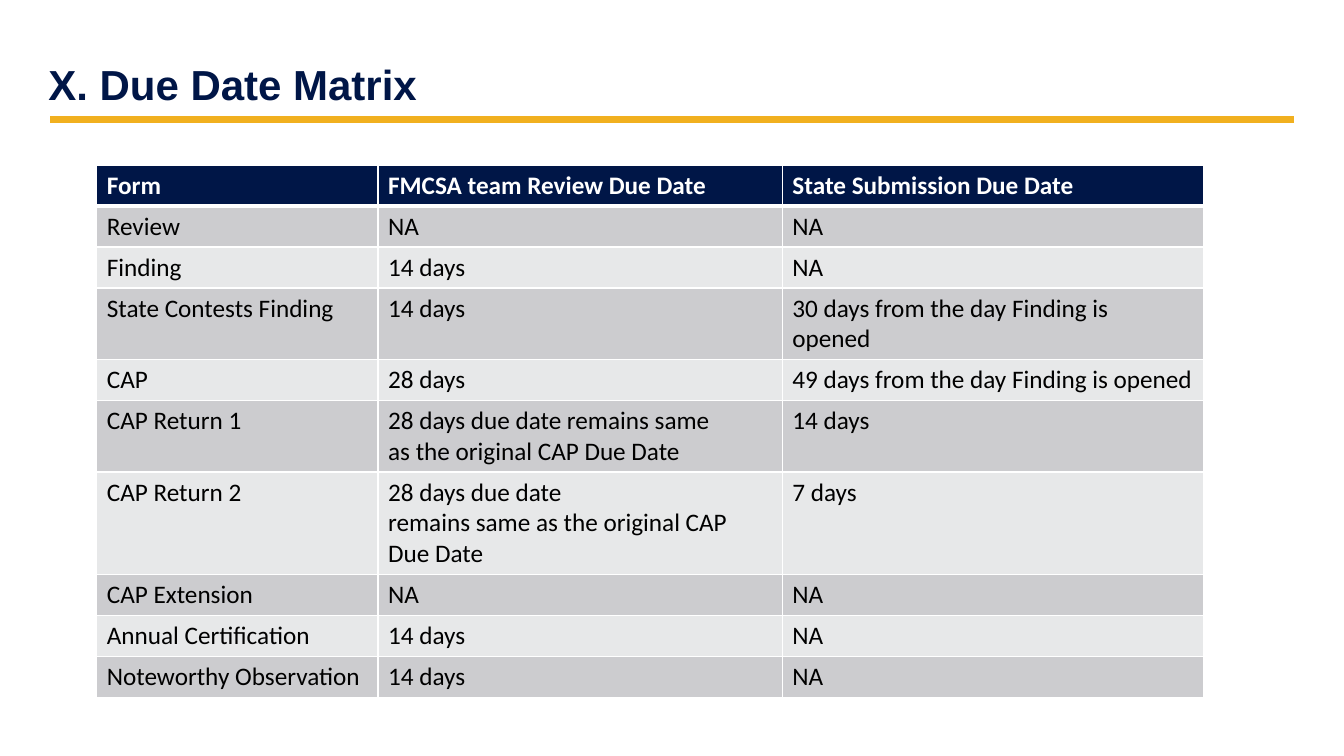
from lxml import etree
from pptx import Presentation
from pptx import util as u
from pptx.dml.color import RGBColor
from pptx.enum import shapes, text
from pptx.oxml import ns

COLORS = {
    "navy": "001647",
    "gold": "F1B01F",
    "white": "FFFFFF",
    "black": "000000",
    "dark_band": "CCCCCF",
    "light_band": "E7E8E9",
}
NBSP = chr(160)
COL_WIDTHS = [2.79, 4.01, 4.18]
ROW_HEIGHT = 0.4
ROWS = [
    ("Form", "FMCSA team Review Due Date", "State Submission Due Date"),
    ("Review", "NA", "NA"),
    ("Finding", "14 days", "NA"),
    ("State Contests Finding", "14 days", "30 days from the day Finding is opened~"),
    ("CAP", "28 days", "49 days from the day Finding is opened"),
    ("CAP Return 1", "28 days due date remains same as~the original CAP Due Date", "14 days"),
    ("CAP Return 2", "28 days due~date remains~same~as~the original CAP Due Date", "7 days"),
    ("CAP Extension", "NA", "NA"),
    ("Annual Certification", "14 days", "NA"),
    ("Noteworthy Observation", "14 days", "NA"),
]


def rgb(name):
    return RGBColor.from_string(COLORS[name])


def write_text(tf, content, *, size, font, color, bold=False, spacing=None):
    p = tf.paragraphs[0]
    p.alignment = text.PP_ALIGN.LEFT
    if spacing:
        p.line_spacing = spacing
    r = p.add_run()
    r.text = content.replace("~", NBSP)
    r.font.size = u.Pt(size)
    r.font.name = font
    r.font.bold = bold
    r.font.color.rgb = rgb(color)


def add_title(s, x, y, w, h):
    sp = s.shapes.title
    sp.left, sp.top, sp.width, sp.height = map(u.Inches, (x, y, w, h))
    tf = sp.text_frame
    tf.word_wrap = True
    tf.vertical_anchor = text.MSO_ANCHOR.BOTTOM
    tf.margin_left = 0
    write_text(tf, "X. Due Date Matrix", size=30, font="Arial",
               color="navy", bold=True, spacing=0.9)


def add_rule(s, x, y, w):
    line = s.shapes.add_connector(
        shapes.MSO_CONNECTOR.STRAIGHT,
        u.Inches(x), u.Inches(y), u.Inches(x + w), u.Inches(y))
    line.line.color.rgb = rgb("gold")
    line.line.width = u.Pt(5)
    etree.SubElement(line._element.spPr, ns.qn("a:effectLst"))


def set_border(cell, side, points):
    tcPr = cell._tc.get_or_add_tcPr()
    ln = etree.SubElement(tcPr, ns.qn(f"a:ln{side}"), w=str(u.Pt(points)))
    fill = etree.SubElement(ln, ns.qn("a:solidFill"))
    etree.SubElement(fill, ns.qn("a:srgbClr"), val=COLORS["white"])


def format_cell(cell, content, row):
    header = row == 0
    for side in "LRTB":
        thick = (header and side == "B") or (row == 1 and side == "T")
        set_border(cell, side, 3 if thick else 1)
    band = "dark_band" if row % 2 else "light_band"
    cell.fill.solid()
    cell.fill.fore_color.rgb = rgb("navy" if header else band)
    write_text(cell.text_frame, content, size=18, font="Calibri",
               color="white" if header else "black", bold=header)


def add_matrix(s, x, y):
    table = s.shapes.add_table(
        len(ROWS), len(COL_WIDTHS), u.Inches(x), u.Inches(y),
        u.Inches(sum(COL_WIDTHS)), u.Inches(ROW_HEIGHT * len(ROWS))).table
    for col, width in zip(table.columns, COL_WIDTHS):
        col.width = u.Inches(width)
    for i, values in enumerate(ROWS):
        table.rows[i].height = u.Inches(ROW_HEIGHT)
        for j, value in enumerate(values):
            format_cell(table.cell(i, j), value, i)


def main():
    prs = Presentation()
    prs.slide_width, prs.slide_height = u.Inches(13.33), u.Inches(7.5)
    s = prs.slides.add_slide(prs.slide_layouts[5])
    add_rule(s, 0.5, 1.19, 12.33)
    add_title(s, 0.48, 0.14, 12.33, 1)
    add_matrix(s, 0.96, 1.64)
    prs.save("out.pptx")


if __name__ == "__main__":
    main()
